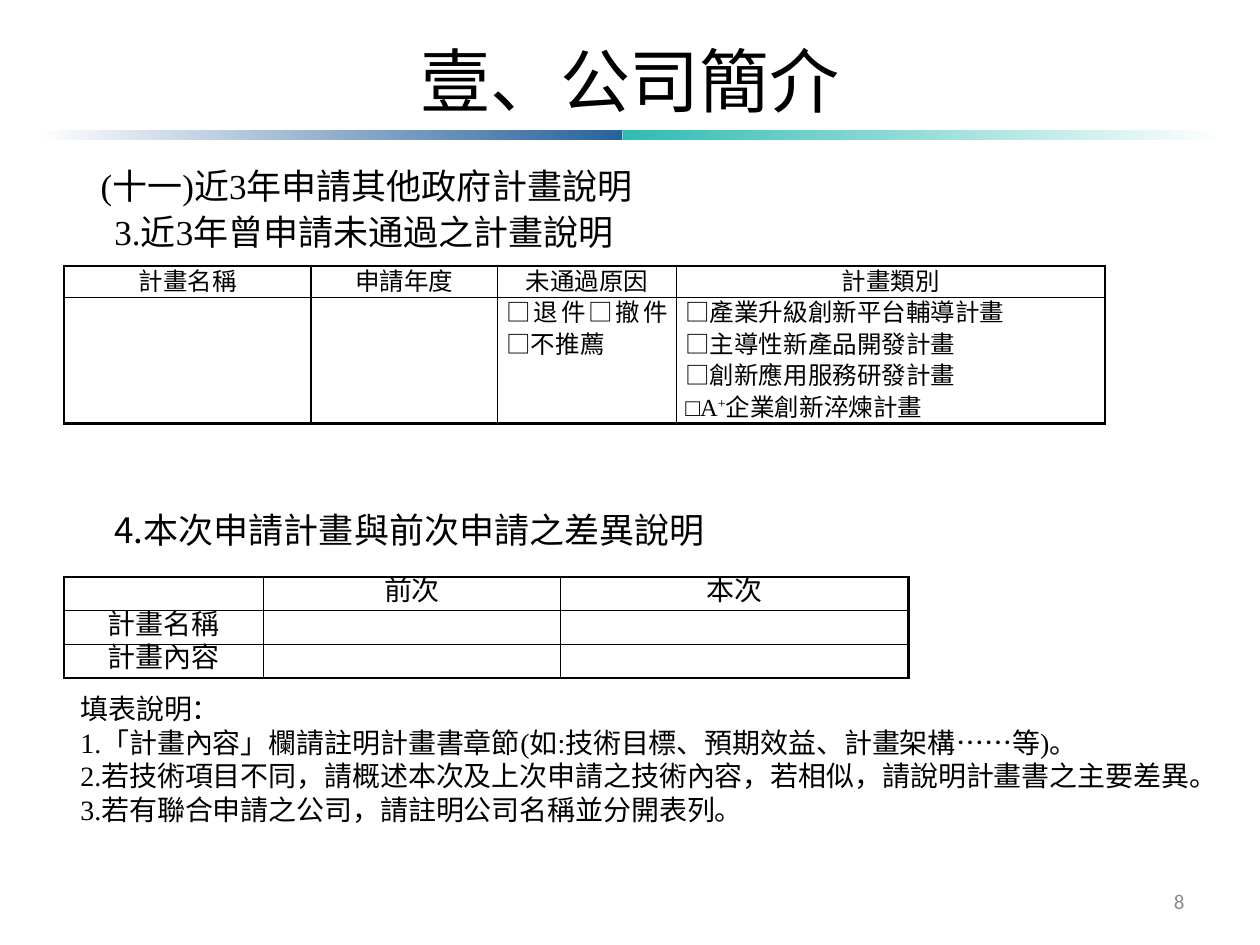
from dataclasses import dataclass

import pptx
import pptx.dml.color
import pptx.enum.shapes
import pptx.enum.text
import pptx.oxml
import pptx.oxml.ns
import pptx.util

RGB = pptx.dml.color.RGBColor
BLACK = RGB(0x00, 0x00, 0x00)
WHITE = RGB(0xFF, 0xFF, 0xFF)
BLUE = RGB(0x28, 0x62, 0x9C)
TEAL = RGB(0x2F, 0xBC, 0xB2)
GRAY = RGB(0x8C, 0x8C, 0x8C)

SERIF, SANS = "Times New Roman", "Noto Sans CJK SC"
ALIGN = pptx.enum.text.PP_ALIGN
ANCHOR = pptx.enum.text.MSO_ANCHOR
FIT = pptx.enum.text.MSO_AUTO_SIZE
WIDTH, HEIGHT = pptx.util.Inches(10), pptx.util.Inches(7.5)
ROW = 3.33  # height of one table row, in percent of the slide
CELL_LEADING = pptx.util.Pt(18)


@dataclass
class Para:
    """Text where | switches between serif and sans, and ^ toggles superscript."""
    text: str
    align: ALIGN = ALIGN.LEFT
    leading: int = None
    level: int = 0
    margin: float = 0
    indent: float = 0


@dataclass
class Box:
    """Place in percent of the slide, with its text and format."""
    left: float
    top: float
    width: float
    height: float
    paras: list
    size: int
    anchor: ANCHOR = ANCHOR.TOP
    fit: FIT = FIT.NONE
    wrap: bool = True
    color: RGB = BLACK
    face: str = SERIF


@dataclass
class Grid:
    """Table: column and row sizes in percent of the slide, cells by (row, column)."""
    left: float
    top: float
    cols: list
    rows: list
    cells: dict
    size: int


def across(share: float) -> int:
    return round(WIDTH * share / 100)


def down(share: float) -> int:
    return round(HEIGHT * share / 100)


def set_all(obj, values: dict) -> None:
    for name, value in values.items():
        setattr(obj, name, value)


def add_run(p, text: str, face: str, size: int, color: RGB, raised: bool) -> None:
    r = p.add_run()
    r.text = text
    set_all(r.font, {"name": face, "size": pptx.util.Pt(size)})
    r.font.color.rgb = color
    props = r.font._element
    ea = pptx.oxml.parse_xml(f'<a:ea {pptx.oxml.ns.nsdecls("a")} typeface="{SANS}"/>')
    props.find(pptx.oxml.ns.qn("a:latin")).addnext(ea)
    if raised:
        props.set("baseline", "30000")


def write(tf, paras: list, size: int, color: RGB = BLACK, face: str = SERIF) -> None:
    for i, para in enumerate(paras):
        p = tf.paragraphs[0] if i == 0 else tf.add_paragraph()
        set_all(p, {"alignment": para.align, "line_spacing": para.leading,
                    "level": para.level})
        props = p._p.get_or_add_pPr()
        props.set("marL", str(pptx.util.Inches(para.margin)))
        props.set("indent", str(pptx.util.Inches(para.indent)))
        for j, part in enumerate(para.text.split("|")):
            for k, piece in enumerate(part.split("^")):
                if piece:
                    add_run(p, piece, SANS if j % 2 else face, size, color, k % 2 == 1)
        if not para.text:
            p._p.append(pptx.oxml.parse_xml(
                f'<a:endParaRPr {pptx.oxml.ns.nsdecls("a")} sz="{size * 100}"/>'))


def draw_box(s, box: Box) -> None:
    sp = s.shapes.add_textbox(across(box.left), down(box.top),
                              across(box.width), down(box.height))
    tf = sp.text_frame
    set_all(tf, {"word_wrap": box.wrap, "auto_size": box.fit,
                 "vertical_anchor": box.anchor})
    write(tf, box.paras, box.size, box.color, box.face)


def draw_bar(s, left: float, width: float, start: RGB, end: RGB) -> None:
    sp = s.shapes.add_shape(pptx.enum.shapes.MSO_SHAPE.RECTANGLE, across(left),
                            down(13.73), across(width), down(1.07))
    sp.shadow.inherit = False
    sp.line.fill.background()
    sp.fill.gradient()
    sp.fill.gradient_angle = 0
    for stop, color, position in zip(sp.fill.gradient_stops, (start, end), (0, 1)):
        stop.color.rgb = color
        stop.position = position


def add_borders(cell, outer: dict) -> None:
    """Thick lines on the table's edge, thin lines inside."""
    props = cell._tc.get_or_add_tcPr()
    for i, side in enumerate("LRTB"):
        width = pptx.util.Pt(1.5 if outer[side] else 1)
        props.insert(i, pptx.oxml.parse_xml(
            f'<a:ln{side} {pptx.oxml.ns.nsdecls("a")} w="{width}"><a:solidFill>'
            f'<a:srgbClr val="{BLACK}"/></a:solidFill></a:ln{side}>'))


def draw_grid(s, grid: Grid) -> None:
    n_rows, n_cols = len(grid.rows), len(grid.cols)
    table = s.shapes.add_table(n_rows, n_cols, across(grid.left), down(grid.top),
                               across(sum(grid.cols)), down(sum(grid.rows))).table
    set_all(table, {"first_row": False, "horz_banding": False})
    for col, share in zip(table.columns, grid.cols):
        col.width = across(share)
    for row, share in zip(table.rows, grid.rows):
        row.height = down(share)
    for r in range(n_rows):
        for c in range(n_cols):
            cell = table.cell(r, c)
            side = pptx.util.Inches(0.07)
            set_all(cell, {"margin_left": side, "margin_right": side,
                           "margin_top": 0, "margin_bottom": 0})
            cell.fill.background()
            add_borders(cell, {"L": c == 0, "R": c == n_cols - 1,
                               "T": r == 0, "B": r == n_rows - 1})
            lines, align = grid.cells.get((r, c), ([""], ALIGN.LEFT))
            write(cell.text_frame, [Para(t, align, CELL_LEADING) for t in lines],
                  grid.size)


def centred(text: str) -> tuple:
    return [text], ALIGN.CENTER


HEAD_LEADING = pptx.util.Pt(26)
BOXES = [
    # Title
    Box(5, 1.73, 90, 13.47, [Para("壹、公司簡介", ALIGN.CENTER)], 40, ANCHOR.MIDDLE),
    # Section headings
    Box(3.1, 16.4, 93.8, 10.8, [
        Para("(十一)近3年申請其他政府計畫說明", leading=HEAD_LEADING, indent=0.39),
        Para("3.近3年曾申請未通過之計畫說明", ALIGN.JUSTIFY, HEAD_LEADING, 1, 0.5),
    ], 20, fit=FIT.SHAPE_TO_FIT_TEXT),
    Box(3.1, 53.07, 54.8, 5.87, [
        Para("|4.本次|申請|計畫與前次申請之差異說明", level=1, margin=0.5),
    ], 20, ANCHOR.MIDDLE, FIT.SHAPE_TO_FIT_TEXT, False),
    # Notes on filling in the tables
    Box(5.4, 72.53, 100.4, 16.13, [
        Para("|填表說明："),
        Para("1.|「計畫內容」欄請註明計畫書章節|(|如|:|技術目標、預期效益、計畫架構|……|等|)|。"),
        Para("2.|若技術項目不同，請概述本次及上次申請之技術內容，若相似，請說明計畫書之主要差異。"),
        Para("3.|若有聯合申請之公司，請註明公司名稱並分開表列。"),
    ], 16, fit=FIT.SHAPE_TO_FIT_TEXT),
    # Page number
    Box(71.7, 92.67, 23.3, 5.33, [Para("8", ALIGN.RIGHT)], 12, ANCHOR.MIDDLE,
        color=GRAY, face="Calibri"),
]

REJECTED = Grid(5.1, 28.13, [19.6, 14.8, 14.2, 34], [ROW, 4 * ROW], {
    (0, 0): centred("計畫名稱"), (0, 1): centred("申請年度"),
    (0, 2): centred("未通過原因"), (0, 3): centred("計畫類別"),
    (1, 2): (["□退件□撤件□不推薦"], ALIGN.JUSTIFY),
    (1, 3): (["□產業升級創新平台輔導計畫", "□主導性新產品開發計畫",
              "□創新應用服務研發計畫", "□A^+^企業創新淬煉計畫"], ALIGN.JUSTIFY),
}, 14)

DIFFERENCES = Grid(5.1, 61.07, [15.8, 23.6, 27.6], [ROW] * 3, {
    (0, 1): centred("前次"), (0, 2): centred("本次"),
    (1, 0): centred("計畫名稱"), (2, 0): centred("計畫內容"),
}, 16)


def main() -> None:
    prs = pptx.Presentation()
    set_all(prs, {"slide_width": WIDTH, "slide_height": HEIGHT})
    s = prs.slides.add_slide(prs.slide_layouts[6])
    # Rule under the title
    draw_bar(s, 2.8, 46.6, WHITE, BLUE)
    draw_bar(s, 49.4, 47.8, TEAL, WHITE)
    for box in BOXES:
        draw_box(s, box)
    for grid in (REJECTED, DIFFERENCES):
        draw_grid(s, grid)
    prs.save("out.pptx")


if __name__ == "__main__":
    main()
